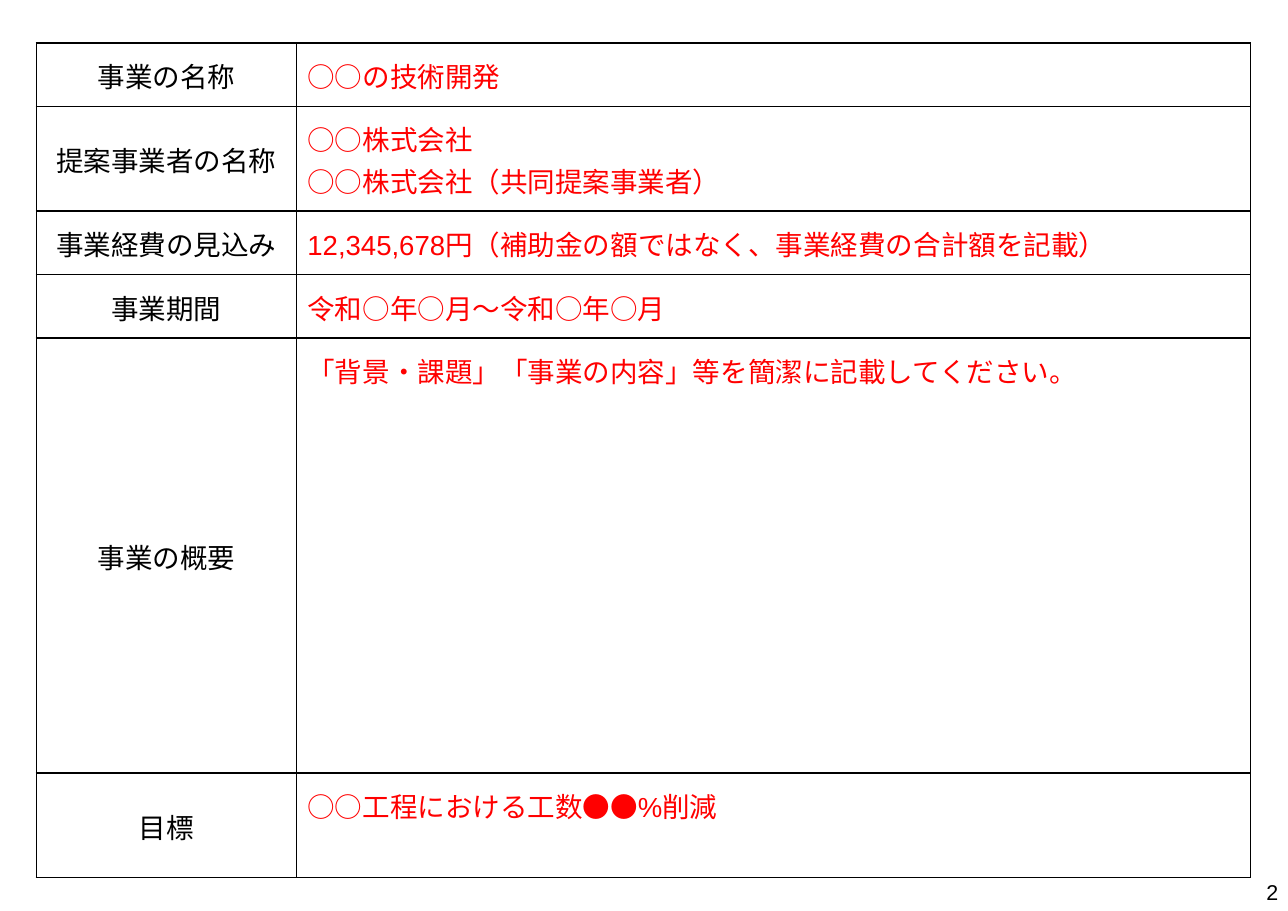
from dataclasses import dataclass

from lxml import etree
from pptx import Presentation
from pptx.dml.color import RGBColor
from pptx.enum.text import MSO_ANCHOR, PP_ALIGN
from pptx.oxml.ns import qn
from pptx.util import Inches, Pt

CENTER, JUSTIFY, RIGHT = PP_ALIGN.CENTER, PP_ALIGN.JUSTIFY, PP_ALIGN.RIGHT
MIDDLE, TOP = MSO_ANCHOR.MIDDLE, MSO_ANCHOR.TOP


@dataclass(frozen=True)
class Theme:
    """Colours, font and type sizes of the slide."""
    font: str = "Arial"
    ink: str = "000000"
    entry: str = "FF0000"
    paper: str = "FFFFFF"
    body_size: int = 18
    number_size: int = 14
    line_pitch: int = 27
    border: int = 1


THEME = Theme()
COLUMN_WIDTHS = (2.36, 8.66)
PROJECT_ITEMS = (
    ("事業の名称", "○○の技術開発", 0.57, MIDDLE),
    ("提案事業者の名称", "○○株式会社\n○○株式会社（共同提案事業者）", 0.95, MIDDLE),
    ("事業経費の見込み", "12,345,678円（補助金の額ではなく、事業経費の合計額を記載）", 0.57, MIDDLE),
    ("事業期間", "令和○年○月～令和○年○月", 0.57, MIDDLE),
    ("事業の概要", "「背景・課題」「事業の内容」等を簡潔に記載してください。", 3.95, TOP),
    ("目標", "○○工程における工数●●%削減", 0.95, TOP),
)


def write(frame, text, *, size=THEME.body_size, color=THEME.ink, align=CENTER, pitch=None):
    """Fill a text frame with one formatted paragraph per line of text."""
    frame.word_wrap = True
    frame.text = text
    for paragraph in frame.paragraphs:
        paragraph.alignment = align
        if pitch:
            paragraph.line_spacing = Pt(pitch)
        font = paragraph.runs[0].font
        font.name = THEME.font
        font.size = Pt(size)
        font.color.rgb = RGBColor.from_string(color)


def draw_borders(cell):
    """Give a table cell a solid line on all four sides."""
    properties = cell._tc.get_or_add_tcPr()
    for side in ("a:lnL", "a:lnR", "a:lnT", "a:lnB"):
        line = etree.SubElement(properties, qn(side), w=str(Pt(THEME.border)))
        fill = etree.SubElement(line, qn("a:solidFill"))
        etree.SubElement(fill, qn("a:srgbClr"), val=THEME.ink)


def fill_cell(cell, text, color, align, anchor):
    """Write and format one cell of the project table."""
    cell.margin_left = cell.margin_right = Inches(0.1)
    cell.margin_top = cell.margin_bottom = Inches(0.1)
    cell.vertical_anchor = anchor
    write(cell.text_frame, text, color=color, align=align, pitch=THEME.line_pitch)
    draw_borders(cell)
    cell.fill.solid()
    cell.fill.fore_color.rgb = RGBColor.from_string(THEME.paper)


def add_project_table(slide):
    """Add the table of project items and their entries."""
    total_height = sum(height for _, _, height, _ in PROJECT_ITEMS)
    table = slide.shapes.add_table(
        len(PROJECT_ITEMS), len(COLUMN_WIDTHS), Inches(0.33), Inches(0.39),
        Inches(sum(COLUMN_WIDTHS)), Inches(total_height)).table
    table.first_row = table.horz_banding = False
    for column, width in zip(table.columns, COLUMN_WIDTHS):
        column.width = Inches(width)
    for row, (label, entry, height, anchor) in zip(table.rows, PROJECT_ITEMS):
        row.height = Inches(height)
        label_cell, entry_cell = row.cells
        fill_cell(label_cell, label, THEME.ink, CENTER, MIDDLE)
        fill_cell(entry_cell, entry, THEME.entry, JUSTIFY, anchor)


def add_page_number(slide, number):
    """Add the page number in the bottom right corner."""
    box = slide.shapes.add_textbox(Inches(10.91), Inches(7.93), Inches(0.79), Inches(0.34))
    write(box.text_frame, number, size=THEME.number_size, align=RIGHT)


def main():
    """Build the project outline slide and save it."""
    deck = Presentation()
    deck.slide_width, deck.slide_height = Inches(11.69), Inches(8.27)
    slide = deck.slides.add_slide(deck.slide_layouts[6])
    add_page_number(slide, "2")
    add_project_table(slide)
    deck.save("out.pptx")


if __name__ == "__main__":
    main()
